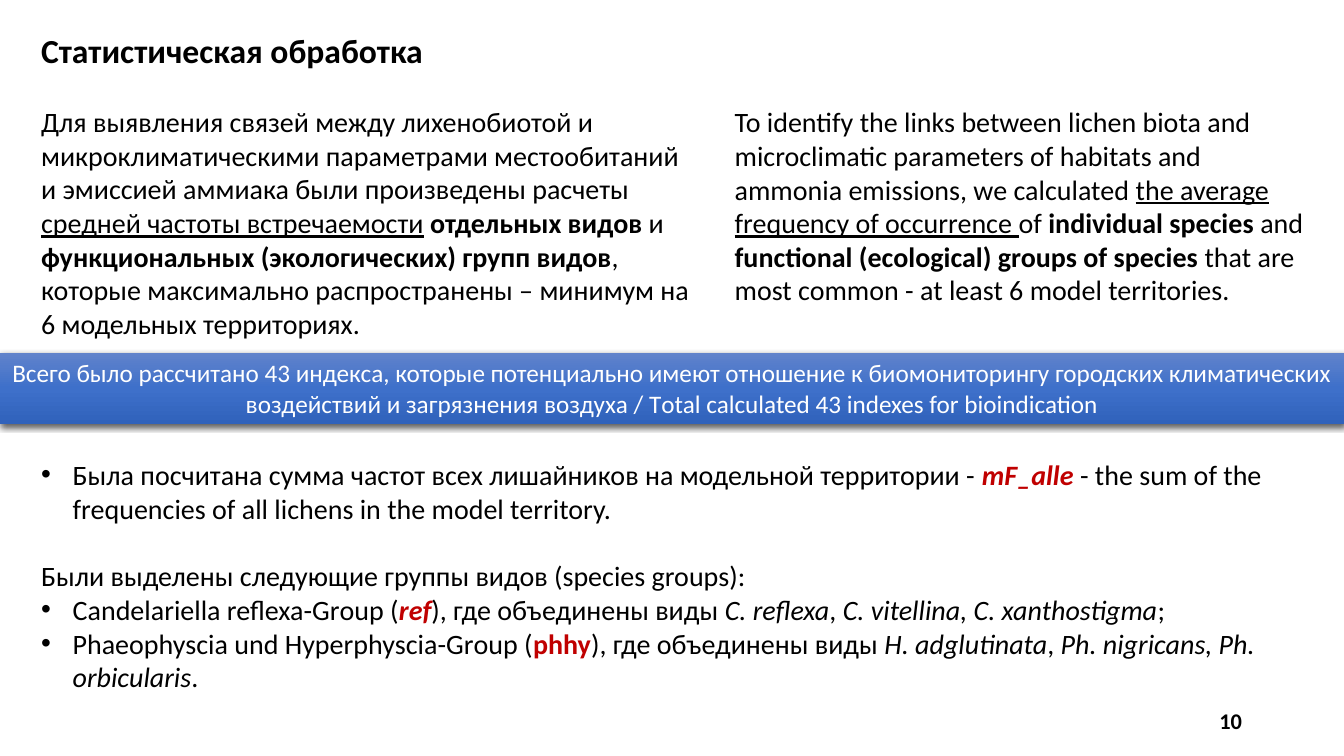
from dataclasses import dataclass

from lxml.etree import SubElement
from pptx import Presentation
from pptx.dml.color import RGBColor
from pptx.enum.shapes import MSO_CONNECTOR, MSO_SHAPE
from pptx.enum.text import MSO_ANCHOR, PP_ALIGN
from pptx.oxml import parse_xml
from pptx.oxml.ns import nsdecls, qn
from pptx.util import Pt


@dataclass(frozen=True)
class Theme:
    font: str = "Calibri"
    ink: str = "000000"
    accent: str = "C00000"
    inverse: str = "FFFFFF"
    rule: str = "5B9BD5"
    band: tuple = ((0, "6183CB"), (50, "3E70CA"), (100, "3062BB"))
    title_size: float = 24
    body_size: float = 20
    band_size: float = 18
    number_size: float = 16


THEME = Theme()
SLIDE_WIDTH, SLIDE_HEIGHT = 960, 540
MARGIN = 22.32
BULLET_INDENT = 22.5

RUN_STYLES = {
    "plain": {},
    "bold": {"bold": True},
    "italic": {"italic": True},
    "underline": {"underline": True},
    "term": {"bold": True, "italic": True},
    "bold term": {"bold": True},
}

RUSSIAN_SUMMARY = [
    ("Для выявления связей между лихенобиотой и микроклиматическими параметрами "
     "местообитаний и эмиссией аммиака были произведены расчеты ", "plain"),
    ("средней частоты встречаемости", "underline"),
    (" ", "plain"),
    ("отдельных видов ", "bold"),
    ("и ", "plain"),
    ("функциональных (экологических) групп видов", "bold"),
    (", которые максимально распространены – минимум на 6 модельных территориях.", "plain"),
]
ENGLISH_SUMMARY = [
    ("To identify the links between lichen biota and microclimatic parameters of habitats "
     "and ammonia emissions, we calculated ", "plain"),
    ("the average frequency of occurrence ", "underline"),
    ("of ", "plain"),
    ("individual species ", "bold"),
    ("and ", "plain"),
    ("functional (ecological) groups of species ", "bold"),
    ("that are most common - at least 6 model territories.", "plain"),
]
BAND_TEXT = ("Всего было рассчитано 43 индекса, которые потенциально имеют отношение к "
             "биомониторингу городских климатических воздействий и загрязнения воздуха / "
             "Тotal calculated 43 indexes for bioindication")
FREQUENCY_SUM = [
    ("Была посчитана сумма частот всех лишайников на модельной территории - ", "plain"),
    ("mF_alle ", "term"),
    ("- the sum of the frequencies of all lichens in the model territory.", "plain"),
]
GROUPS_HEADING = [("Были выделены следующие группы видов (species groups):", "plain")]
CANDELARIELLA = [
    ("Candelariella reflexa-Grоup (", "plain"),
    ("ref", "term"),
    ("), где объединены виды ", "plain"),
    ("C. reflexa", "italic"),
    (", ", "plain"),
    ("C. vitellina, C. xanthostigma", "italic"),
    (";", "plain"),
]
PHAEOPHYSCIA = [
    ("Phaeophyscia und Hyperphyscia-Grоup (", "plain"),
    ("phhy", "bold term"),
    ("), где объединены виды ", "plain"),
    ("H. adglutinata", "italic"),
    (", ", "plain"),
    ("Ph. nigricans, Ph. orbicularis", "italic"),
    (".", "plain"),
]


def set_attributes(target, values):
    for name, value in values.items():
        setattr(target, name, value)


def write_runs(paragraph, runs, size, color=THEME.ink):
    for text, style in runs:
        run = paragraph.add_run()
        run.text = text
        set_attributes(run.font, {"name": THEME.font, "size": Pt(size), **RUN_STYLES[style]})
        run.font.color.rgb = RGBColor.from_string(THEME.accent if "term" in style else color)


def add_bullet(paragraph):
    properties = paragraph._p.get_or_add_pPr()
    properties.set("marL", str(Pt(BULLET_INDENT)))
    properties.set("indent", str(-Pt(BULLET_INDENT)))
    SubElement(properties, qn("a:buFont")).set("typeface", "Arial")
    SubElement(properties, qn("a:buChar")).set("char", "•")


def add_text(slide, box, runs, size, **frame_format):
    """Add a one-paragraph text box and return its text frame."""
    frame = slide.shapes.add_textbox(*map(Pt, box)).text_frame
    set_attributes(frame, {"word_wrap": True, **frame_format})
    write_runs(frame.paragraphs[0], runs, size)
    return frame


def add_species_groups(slide, box):
    frame = add_text(slide, box, FREQUENCY_SUM, THEME.body_size)
    add_bullet(frame.paragraphs[0])
    heading = frame.add_paragraph()
    heading.space_before = Pt(24.4)
    write_runs(heading, GROUPS_HEADING, THEME.body_size)
    for group in (CANDELARIELLA, PHAEOPHYSCIA):
        paragraph = frame.add_paragraph()
        add_bullet(paragraph)
        write_runs(paragraph, group, THEME.body_size)


def add_rule(slide, left, top, width):
    rule = slide.shapes.add_connector(
        MSO_CONNECTOR.STRAIGHT, Pt(left), Pt(top), Pt(left + width), Pt(top))
    rule.line.color.rgb = RGBColor.from_string(THEME.rule)
    rule.line.width = Pt(0.5)
    SubElement(rule._element.spPr, qn("a:effectLst"))


def add_band(slide, box):
    """Add the index-count band with its vertical gradient and soft shadow."""
    left, top, width, height = box
    add_rule(slide, left, top + height - 1.5, width)
    band = slide.shapes.add_shape(MSO_SHAPE.RECTANGLE, *map(Pt, box))
    band.line.fill.background()
    stops = "".join(f'<a:gs pos="{position * 1000}"><a:srgbClr val="{color}"/></a:gs>'
                    for position, color in THEME.band)
    properties = band._element.spPr
    properties.find(qn("a:ln")).addprevious(parse_xml(
        f'<a:gradFill {nsdecls("a")} rotWithShape="1"><a:gsLst>{stops}</a:gsLst>'
        '<a:lin ang="5400000" scaled="0"/></a:gradFill>'))
    properties.append(parse_xml(
        f'<a:effectLst {nsdecls("a")}><a:outerShdw blurRad="{Pt(4.5)}" dist="{Pt(1.5)}" '
        'dir="5400000" algn="ctr" rotWithShape="0"><a:srgbClr val="000000">'
        '<a:alpha val="63000"/></a:srgbClr></a:outerShdw></a:effectLst>'))
    frame = band.text_frame
    set_attributes(frame, {"word_wrap": True, "vertical_anchor": MSO_ANCHOR.TOP})
    frame.paragraphs[0].alignment = PP_ALIGN.CENTER
    write_runs(frame.paragraphs[0], [(BAND_TEXT, "plain")], THEME.band_size, THEME.inverse)


def add_slide_number(slide, box):
    frame = add_text(slide, box, [("10", "bold")], THEME.number_size,
                     vertical_anchor=MSO_ANCHOR.MIDDLE)
    frame.paragraphs[0].alignment = PP_ALIGN.RIGHT


def main():
    presentation = Presentation()
    set_attributes(presentation, {"slide_width": Pt(SLIDE_WIDTH), "slide_height": Pt(SLIDE_HEIGHT)})
    slide = presentation.slides.add_slide(presentation.slide_layouts[6])
    add_slide_number(slide, (678.24, 500.4, 216, 28.8))
    add_text(slide, (MARGIN, 18, 290.16, 36), [("Статистическая обработка", "bold")],
             THEME.title_size, word_wrap=False)
    add_text(slide, (MARGIN, 71.28, 478.08, 177.12), RUSSIAN_SUMMARY, THEME.body_size)
    add_text(slide, (517.68, 71.28, 427.68, 152.64), ENGLISH_SUMMARY, THEME.body_size)
    add_species_groups(slide, (MARGIN, 323.28, 896.4, 177.12))
    add_band(slide, (0, 252, SLIDE_WIDTH, 51.12))
    presentation.save("out.pptx")


if __name__ == "__main__":
    main()
